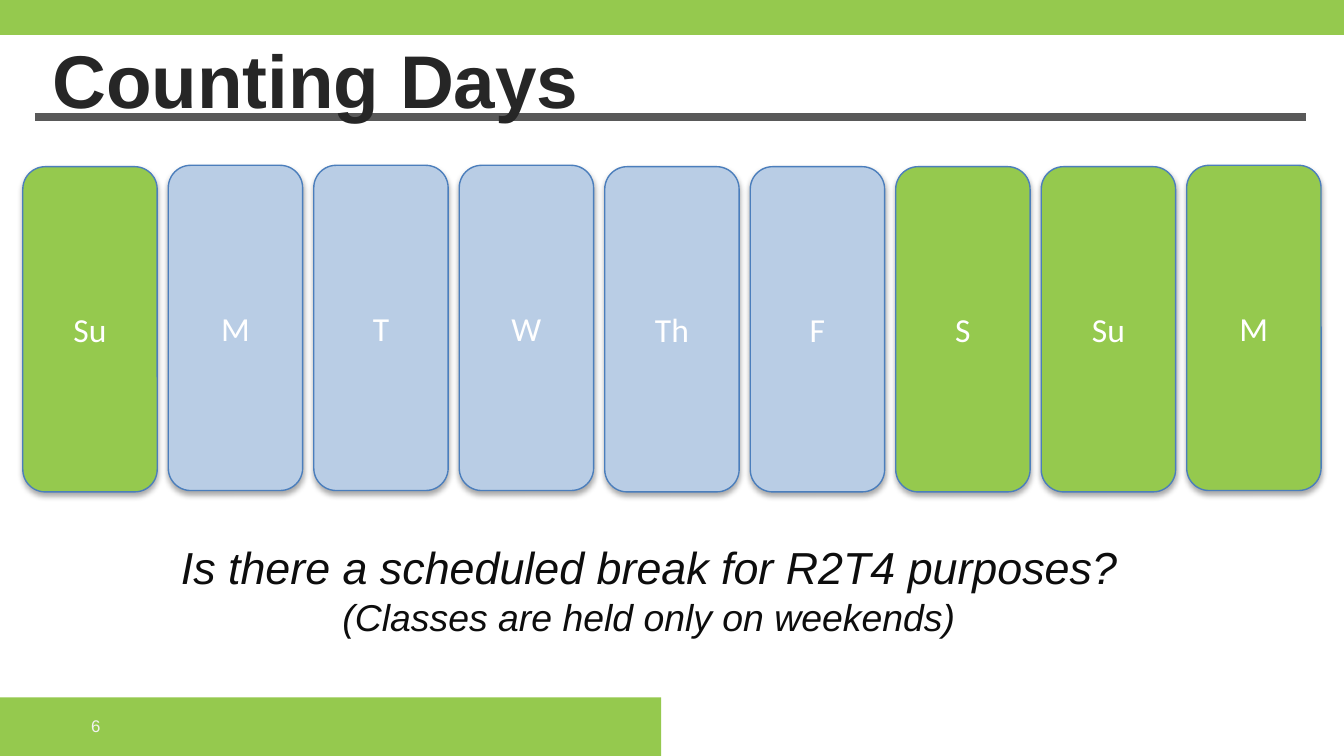
from dataclasses import dataclass

from lxml.etree import SubElement
from pptx import Presentation
from pptx.dml.color import RGBColor
from pptx.enum.shapes import MSO_CONNECTOR, MSO_SHAPE
from pptx.enum.text import MSO_ANCHOR, MSO_AUTO_SIZE, PP_ALIGN
from pptx.oxml import parse_xml
from pptx.oxml.ns import nsdecls, qn
from pptx.util import Inches, Pt

GREEN = "95C94E"
PALE_BLUE = "B9CDE5"
SHADOW = (
    f'<a:effectLst {nsdecls("a")}>'
    '<a:outerShdw blurRad="40000" dist="23000" dir="5400000" rotWithShape="0">'
    '<a:srgbClr val="000000"><a:alpha val="35000"/></a:srgbClr>'
    "</a:outerShdw></a:effectLst>"
)


@dataclass(frozen=True)
class Box:
    left: float
    top: float
    width: float
    height: float

    def lengths(self) -> tuple:
        return tuple(Inches(v) for v in (self.left, self.top, self.width, self.height))


@dataclass(frozen=True)
class Day:
    label: str
    color: str
    top: float


DAYS = [
    Day("Su", GREEN, 1.24),
    Day("M", PALE_BLUE, 1.23),
    Day("T", PALE_BLUE, 1.23),
    Day("W", PALE_BLUE, 1.23),
    Day("Th", PALE_BLUE, 1.24),
    Day("F", PALE_BLUE, 1.24),
    Day("S", GREEN, 1.24),
    Day("Su", GREEN, 1.24),
    Day("M", GREEN, 1.23),
]
FIRST_LEFT, LAST_LEFT = 0.17, 8.83
DAY_PITCH = (LAST_LEFT - FIRST_LEFT) / (len(DAYS) - 1)


def rgb(color: str) -> RGBColor:
    return RGBColor.from_string(color)


def set_font(font, size: float, color: str, name: str = "Arial") -> None:
    font.name = name
    font.size = Pt(size)
    font.color.rgb = rgb(color)


def add_band(slide, box: Box) -> None:
    band = slide.shapes.add_shape(MSO_SHAPE.RECTANGLE, *box.lengths())
    band.shadow.inherit = False
    band.fill.solid()
    band.fill.fore_color.rgb = rgb(GREEN)
    band.line.fill.background()


def add_title_rule(slide) -> None:
    rule = slide.shapes.add_connector(
        MSO_CONNECTOR.STRAIGHT, Inches(0.26), Inches(0.87), Inches(9.72), Inches(0.87)
    )
    rule.line.color.rgb = rgb("595959")
    rule.line.width = Pt(4)
    SubElement(rule._element.spPr, qn("a:effectLst"))


def place_title(slide, text: str) -> None:
    title = slide.shapes.title
    title.left, title.top, title.width, title.height = Box(0.29, 0.2, 9.35, 0.53).lengths()
    frame = title.text_frame
    frame.text = text
    frame.auto_size = MSO_AUTO_SIZE.NONE
    frame.vertical_anchor = MSO_ANCHOR.TOP
    heading = frame.paragraphs[0]
    heading.alignment = PP_ALIGN.LEFT
    set_font(heading.font, 40, "262626")
    heading.font.bold = True
    slide.shapes._spTree.append(title._element)


def add_day(slide, day: Day, left: float) -> None:
    card = slide.shapes.add_shape(
        MSO_SHAPE.ROUNDED_RECTANGLE, *Box(left, day.top, 1, 2.42).lengths()
    )
    card.fill.solid()
    card.fill.fore_color.rgb = rgb(day.color)
    card.line.color.rgb = rgb("4B7EBC")
    card.line.width = Pt(0.75)
    card._element.spPr.append(parse_xml(SHADOW))
    frame = card.text_frame
    frame.text = day.label
    frame.vertical_anchor = MSO_ANCHOR.MIDDLE
    label = frame.paragraphs[0]
    label.alignment = PP_ALIGN.CENTER
    set_font(label.font, 18, "FFFFFF", "Calibri")


def add_question(slide, question: str, condition: str) -> None:
    frame = slide.shapes.add_textbox(*Box(0.58, 3.97, 8.5, 0.84).lengths()).text_frame
    frame.word_wrap = True
    frame.auto_size = MSO_AUTO_SIZE.SHAPE_TO_FIT_TEXT
    prompt = frame.paragraphs[0]
    prompt.alignment = PP_ALIGN.CENTER
    set_font(prompt.font, 24, "0D0D0D")
    prompt.font.italic = True
    prompt.add_run().text = question
    prompt.add_line_break()
    condition_run = prompt.add_run()
    condition_run.text = condition
    condition_run.font.size = Pt(20)


def add_page_number(slide, number: str) -> None:
    frame = slide.shapes.add_textbox(*Box(0.58, 5.25, 2.33, 0.3).lengths()).text_frame
    frame.word_wrap = True
    frame.vertical_anchor = MSO_ANCHOR.MIDDLE
    frame.text = number
    set_font(frame.paragraphs[0].font, 9, "F2F2F2")


def main() -> None:
    deck = Presentation()
    deck.slide_width = Inches(10)
    deck.slide_height = Inches(10) * 9 // 16
    slide = deck.slides.add_slide(deck.slide_layouts[5])
    add_band(slide, Box(0, 5.19, 4.92, 0.44))
    add_band(slide, Box(-0.02, 0, 10.03, 0.26))
    add_title_rule(slide)
    place_title(slide, "Counting Days")
    for index, day in enumerate(DAYS):
        add_day(slide, day, FIRST_LEFT + index * DAY_PITCH)
    add_question(
        slide,
        "Is there a scheduled break for R2T4 purposes?",
        "(Classes are held only on weekends)",
    )
    add_page_number(slide, "6")
    deck.save("out.pptx")


if __name__ == "__main__":
    main()
